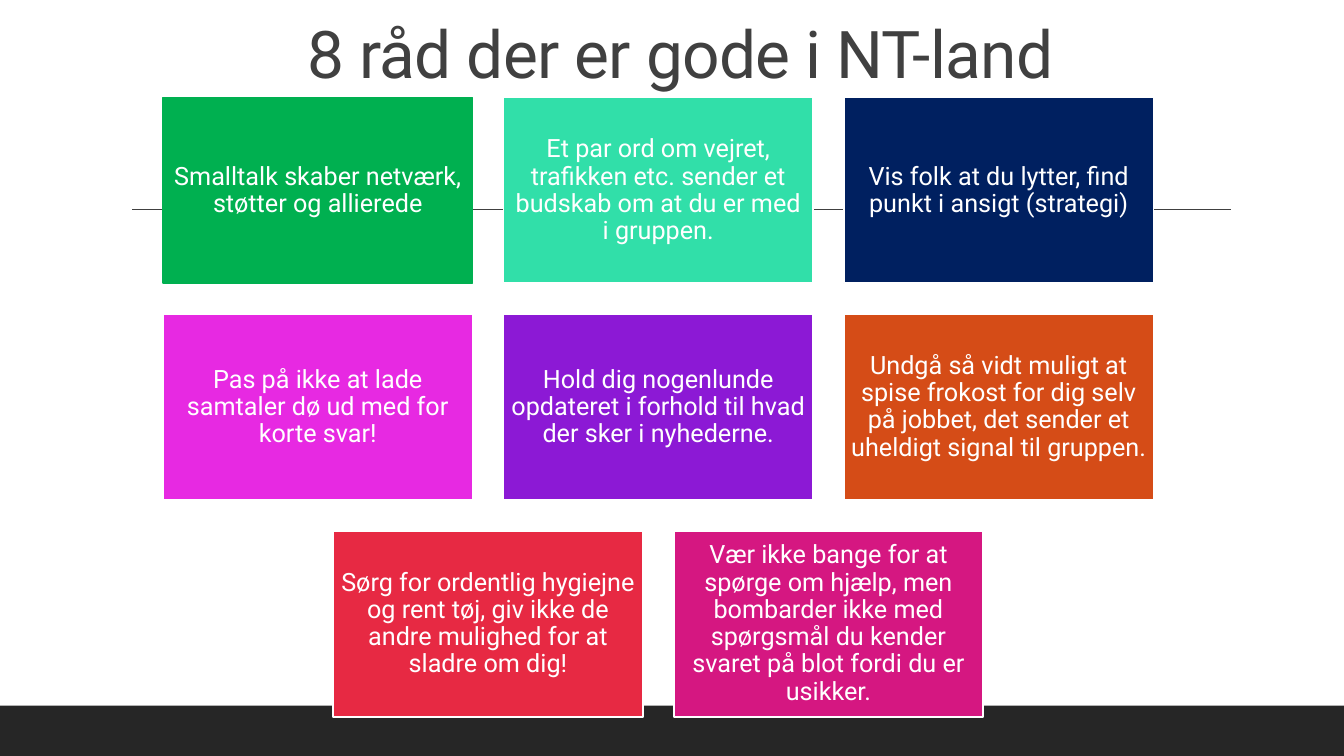
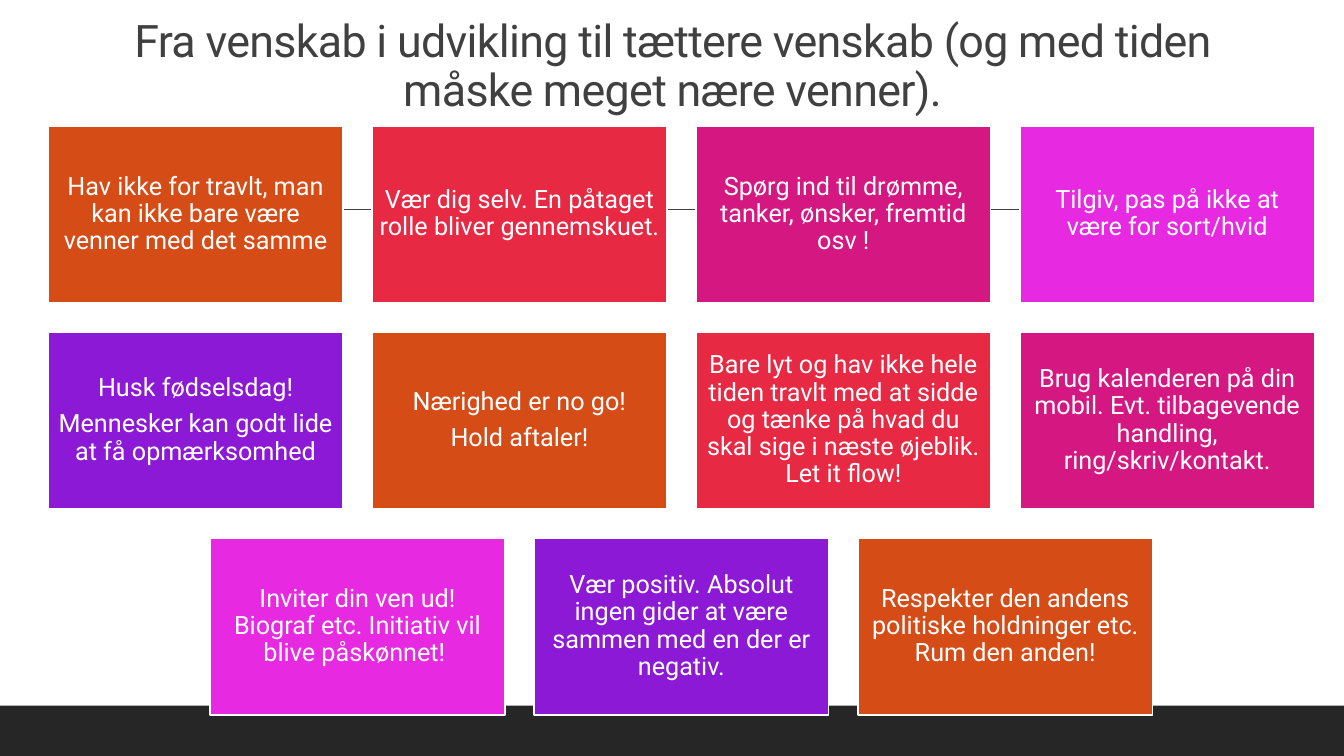
from lxml import etree
from pptx import Presentation
from pptx import util as u
from pptx.dml.color import RGBColor
from pptx.enum import shapes, text
from pptx.oxml.ns import qn

WHITE = RGBColor(0xFF, 0xFF, 0xFF)
BAND = RGBColor(0x26, 0x26, 0x26)
INK = RGBColor(0x40, 0x40, 0x40)
GREEN = RGBColor(0x00, 0xB0, 0x50)
MINT = RGBColor(0x31, 0xDF, 0xA9)
NAVY = RGBColor(0x00, 0x20, 0x60)
PINK = RGBColor(0xE7, 0x29, 0xE2)
PURPLE = RGBColor(0x8C, 0x19, 0xD5)
ORANGE = RGBColor(0xD5, 0x4C, 0x17)
RED = RGBColor(0xE7, 0x29, 0x43)
MAGENTA = RGBColor(0xD5, 0x17, 0x81)

WIDTH, HEIGHT = 33.87, 19.05
FONT = "Roboto"


class Deck:
    def __init__(self):
        self.prs = Presentation()
        self.prs.slide_width = u.Cm(WIDTH)
        self.prs.slide_height = u.Cm(HEIGHT)
        self.s = None

    def new_slide(self):
        self.s = self.prs.slides.add_slide(self.prs.slide_layouts[5])
        self.rect(0, 17.78, WIDTH, 1.27, BAND)
        self.rule(3.33, 31.01, 5.28)

    def rect(self, x, y, w, h, fill, line=None):
        sp = self.s.shapes.add_shape(
            shapes.MSO_SHAPE.RECTANGLE, u.Cm(x), u.Cm(y), u.Cm(w), u.Cm(h))
        sp.shadow.inherit = False
        sp.fill.solid()
        sp.fill.fore_color.rgb = fill
        if line is None:
            sp.line.fill.background()
        else:
            sp.line.color.rgb = line
            sp.line.width = u.Pt(1.25)
        return sp

    def rule(self, x1, x2, y):
        cn = self.s.shapes.add_connector(
            shapes.MSO_CONNECTOR.STRAIGHT, u.Cm(x1), u.Cm(y), u.Cm(x2), u.Cm(y))
        cn.line.color.rgb = INK
        cn.line.width = u.Pt(1)
        etree.SubElement(cn._element.spPr, qn("a:effectLst"))

    def run(self, p, content, size, color):
        """Add one run to a centred paragraph with tight line spacing."""
        p.alignment = text.PP_ALIGN.CENTER
        p.line_spacing = 0.9
        r = p.add_run()
        r.text = content
        r.font.name = FONT
        r.font.size = u.Pt(size)
        r.font.color.rgb = color
        return r

    def title(self, content, x, y, w, h, size):
        sp = self.s.shapes.title
        sp.left, sp.top, sp.width, sp.height = (u.Cm(v) for v in (x, y, w, h))
        tf = sp.text_frame
        tf.word_wrap = True
        tf.auto_size = text.MSO_AUTO_SIZE.NONE
        tf.vertical_anchor = text.MSO_ANCHOR.BOTTOM
        r = self.run(tf.paragraphs[0], content, size, INK)
        r._r.get_or_add_rPr().set("spc", "-50")

    def card(self, x, y, w, h, fill, paragraphs, line=WHITE):
        tf = self.rect(x, y, w, h, fill, line).text_frame
        tf.word_wrap = True
        tf.vertical_anchor = text.MSO_ANCHOR.MIDDLE
        tf.margin_left = tf.margin_right = u.Cm(0.18)
        tf.margin_top = tf.margin_bottom = u.Cm(0.18)
        for i, content in enumerate(paragraphs):
            p = tf.add_paragraph() if i else tf.paragraphs[0]
            p.space_after = u.Pt(6.3)
            self.run(p, content, 18, WHITE)

    def card_grid(self, cards, columns, x, y, w):
        """Lay cards out in rows, centring a short last row."""
        h, gap = 0.6 * w, 0.1 * w
        for start in range(0, len(cards), columns):
            row = cards[start:start + columns]
            left = x + (columns - len(row)) * (w + gap) / 2
            top = y + start // columns * (h + gap)
            for i, (fill, *paragraphs) in enumerate(row):
                line = GREEN if fill == GREEN else WHITE
                self.card(left + i * (w + gap), top, w, h, fill, paragraphs, line)


ADVICE = [
    (GREEN, "Smalltalk skaber netværk, støtter og allierede"),
    (MINT, "Et par ord om vejret, trafikken etc. sender et budskab om at du er "
           "med i gruppen."),
    (NAVY, "Vis folk at du lytter, find punkt i ansigt (strategi)"),
    (PINK, "Pas på ikke at lade samtaler dø ud med for korte svar!"),
    (PURPLE, "Hold dig nogenlunde opdateret i forhold til hvad der sker i "
             "nyhederne."),
    (ORANGE, "Undgå så vidt muligt at spise frokost for dig selv på jobbet, det "
             "sender et uheldigt signal til gruppen."),
    (RED, "Sørg for ordentlig hygiejne og rent tøj, giv ikke de andre mulighed "
          "for at sladre om dig!"),
    (MAGENTA, "Vær ikke bange for at spørge om hjælp, men bombarder ikke med "
              "spørgsmål du kender svaret på blot fordi du er usikker."),
]

FRIENDSHIP = [
    (ORANGE, "Hav ikke for travlt, man kan ikke bare være venner med det samme"),
    (RED, "Vær dig selv. En påtaget rolle bliver gennemskuet. "),
    (MAGENTA, "Spørg ind til drømme, tanker, ønsker, fremtid osv !"),
    (PINK, "Tilgiv, pas på ikke at være for sort/hvid"),
    (PURPLE, "Husk fødselsdag!", "Mennesker kan godt lide at få opmærksomhed"),
    (ORANGE, "Nærighed er no go!", "Hold aftaler!"),
    (RED, "Bare lyt og hav ikke hele tiden travlt med at sidde og tænke på hvad "
          "du skal sige i næste øjeblik. Let it flow!"),
    (MAGENTA, "Brug kalenderen på din mobil. Evt. tilbagevende handling, "
              "ring/skriv/kontakt."),
    (PINK, "Inviter din ven ud! Biograf etc. Initiativ vil blive påskønnet! "),
    (PURPLE, "Vær positiv. Absolut ingen gider at være sammen med en der er "
             "negativ."),
    (ORANGE, "Respekter den andens politiske holdninger etc. Rum den anden!"),
]


def main():
    deck = Deck()

    deck.new_slide()
    deck.title("8 råd der er gode i NT-land ", 2.74, -1.22, 29.21, 3.68, 47)
    deck.card_grid(ADVICE, columns=3, x=4.11, y=2.46, w=7.8)

    deck.new_slide()
    deck.title("Fra venskab i udvikling til tættere venskab (og med tiden måske "
               "meget nære venner).", 2.34, 0.15, 29.21, 2.9, 32)
    deck.card_grid(FRIENDSHIP, columns=4, x=1.22, y=3.17, w=7.42)

    deck.prs.save("out.pptx")


if __name__ == "__main__":
    main()
